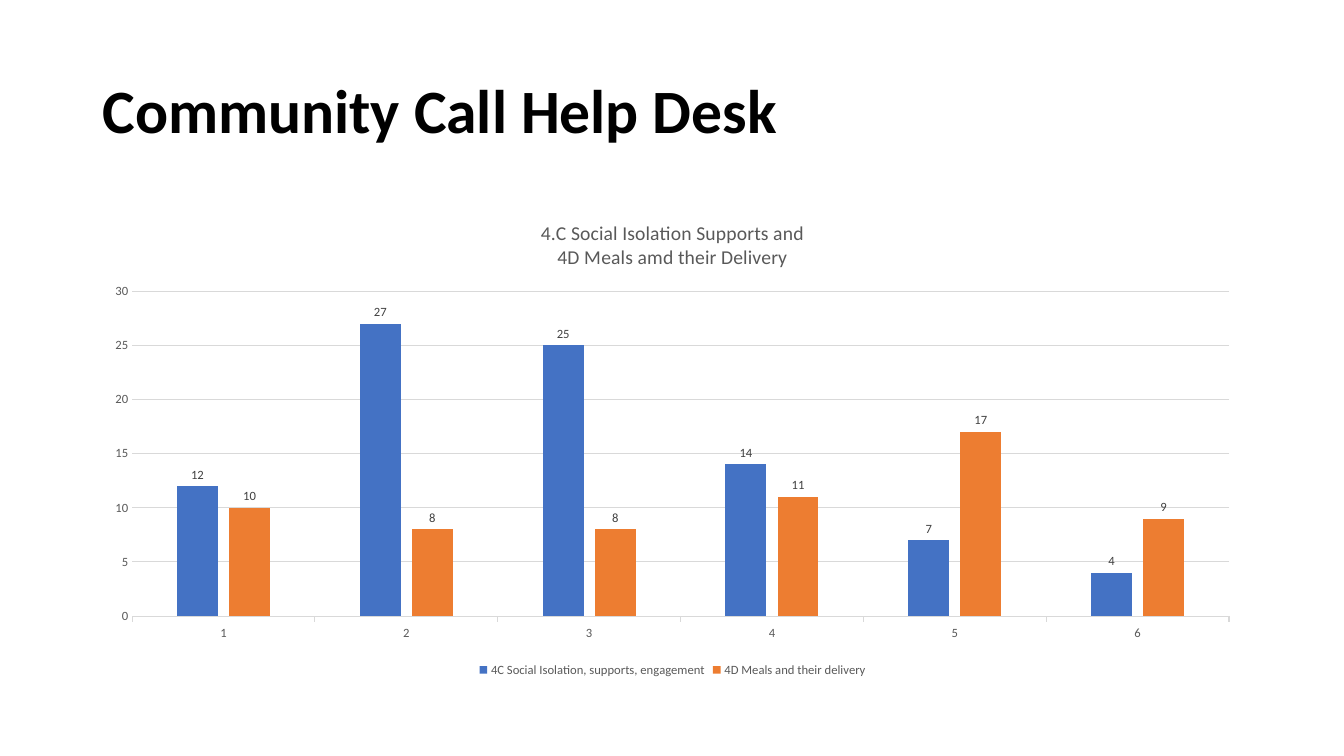
from lxml import etree
from pptx import Presentation
from pptx.chart.data import CategoryChartData
from pptx.dml.color import RGBColor
from pptx.enum.chart import XL_CHART_TYPE, XL_LABEL_POSITION, XL_LEGEND_POSITION, XL_TICK_MARK
from pptx.enum.text import MSO_ANCHOR
from pptx.oxml.ns import qn
from pptx.util import Inches, Pt

# Content
HEADING = "Community Call Help Desk"
CHART_TITLE = ["4.C Social Isolation Supports and", "4D Meals amd their Delivery"]
CATEGORIES = ["1", "2", "3", "4", "5", "6"]
SERIES = [
    ("4C Social Isolation, supports, engagement", [12, 27, 25, 14, 7, 4]),
    ("4D Meals and their delivery", [10, 8, 8, 11, 17, 9]),
]

THEME = {
    "font": "Calibri",
    "heading": (44, "000000"),
    "chart_title": (14, "595959"),
    "axis": (9, "595959"),
    "label": (9, "404040"),
    "line": "D9D9D9",
    "bars": ["4472C4", "ED7D31"],
}

# Placement
LEFT, WIDTH = Inches(0.92), Inches(11.5)
HEADING_TOP, HEADING_HEIGHT = Inches(0.4), Inches(1.45)
CHART_TOP, CHART_HEIGHT = Inches(2), Inches(4.76)
PLOT_AREA = {"x": 0.034, "y": 0.187, "w": 0.946, "h": 0.677}  # shares of the chart


def style_font(font, role, bold=False):
    size, color = THEME[role]
    font.name = THEME["font"]
    font.size = Pt(size)
    font.bold = bold
    font.color.rgb = RGBColor.from_string(color)


def style_line(line):
    line.color.rgb = RGBColor.from_string(THEME["line"])
    line.width = Pt(0.75)


def place_plot(chart):
    plot_area = chart.element.find(".//" + qn("c:plotArea"))
    layout = plot_area.find(qn("c:layout"))
    if layout is None:
        layout = etree.Element(qn("c:layout"))
        plot_area.insert(0, layout)
    manual = etree.SubElement(layout, qn("c:manualLayout"))
    settings = {"layoutTarget": "inner", "xMode": "edge", "yMode": "edge", **PLOT_AREA}
    for tag, value in settings.items():
        etree.SubElement(manual, qn("c:" + tag)).set("val", str(value))


def add_heading(page):
    box = page.shapes.add_textbox(LEFT, HEADING_TOP, WIDTH, HEADING_HEIGHT)
    frame = box.text_frame
    frame.word_wrap = True
    frame.vertical_anchor = MSO_ANCHOR.MIDDLE
    frame.text = HEADING
    para = frame.paragraphs[0]
    para.line_spacing = 0.9
    style_font(para.runs[0].font, "heading", bold=True)


def add_call_chart(page):
    data = CategoryChartData()
    data.categories = CATEGORIES
    for name, values in SERIES:
        data.add_series(name, values)
    chart = page.shapes.add_chart(
        XL_CHART_TYPE.COLUMN_CLUSTERED, LEFT, CHART_TOP, WIDTH, CHART_HEIGHT, data
    ).chart
    style_font(chart.font, "axis")
    place_plot(chart)

    # Chart title
    chart.has_title = True
    frame = chart.chart_title.text_frame
    frame.text = "\n".join(CHART_TITLE)
    for para in frame.paragraphs:
        style_font(para.runs[0].font, "chart_title")
    chart.chart_title.include_in_layout = False

    # Legend
    chart.has_legend = True
    chart.legend.position = XL_LEGEND_POSITION.BOTTOM
    chart.legend.include_in_layout = False
    style_font(chart.legend.font, "axis")

    # Axes
    for axis in (chart.category_axis, chart.value_axis):
        style_font(axis.tick_labels.font, "axis")
        axis.minor_tick_mark = XL_TICK_MARK.NONE
    chart.category_axis.major_tick_mark = XL_TICK_MARK.OUTSIDE
    style_line(chart.category_axis.format.line)
    values = chart.value_axis
    values.major_tick_mark = XL_TICK_MARK.NONE
    values.minimum_scale, values.maximum_scale, values.major_unit = 0, 30, 5
    values.format.line.fill.background()
    values.has_major_gridlines = True
    style_line(values.major_gridlines.format.line)

    # Bars and their values
    plot = chart.plots[0]
    plot.vary_by_categories = False
    plot.gap_width, plot.overlap = 219, -27
    for series, color in zip(plot.series, THEME["bars"]):
        series.format.fill.solid()
        series.format.fill.fore_color.rgb = RGBColor.from_string(color)
        labels = series.data_labels
        labels.show_value = True
        labels.position = XL_LABEL_POSITION.OUTSIDE_END
        style_font(labels.font, "label")


def main():
    deck = Presentation()
    deck.slide_width, deck.slide_height = Inches(13.33), Inches(7.5)
    page = deck.slides.add_slide(deck.slide_layouts[6])
    add_heading(page)
    add_call_chart(page)
    deck.save("out.pptx")


if __name__ == "__main__":
    main()
